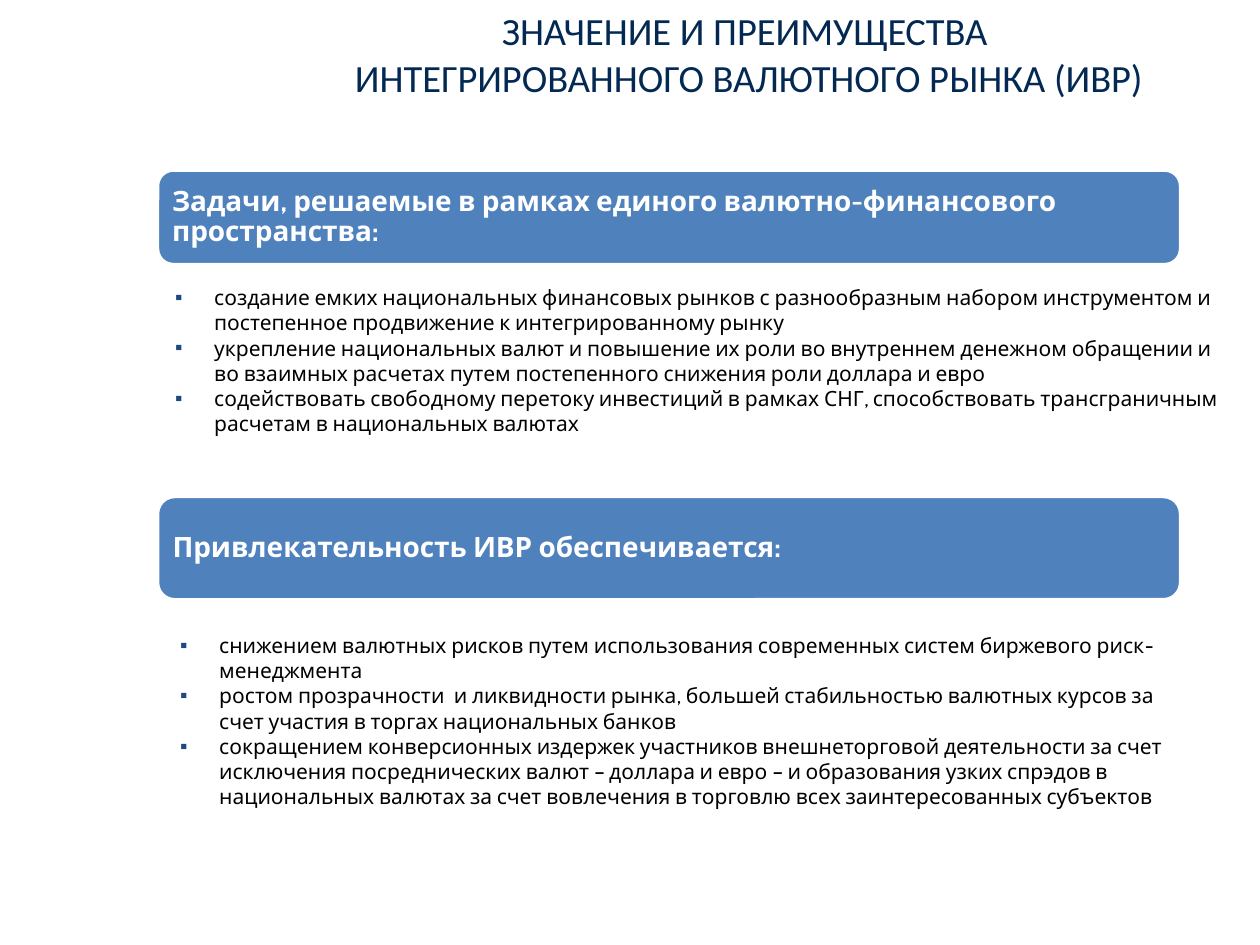
from lxml import etree
from pptx import Presentation
from pptx import util as u
from pptx.dml.color import RGBColor
from pptx.enum import shapes, text
from pptx.oxml import ns

NAVY = RGBColor(0x03, 0x29, 0x53)
BLUE = RGBColor(0x4F, 0x81, 0xBD)
BULLET = RGBColor(0x1F, 0x49, 0x7D)
WHITE = RGBColor(0xFF, 0xFF, 0xFF)
BLACK = RGBColor(0, 0, 0)

COLUMNS, ROWS = 100, 75
BANNER_LEFT, BANNER_WIDTH = 12.5, 81.2

TITLE = "ЗНАЧЕНИЕ И ПРЕИМУЩЕСТВА \vИНТЕГРИРОВАННОГО ВАЛЮТНОГО РЫНКА (ИВР)"
# Each section: heading, banner (row, height), list (column, row, width, height), items
SECTIONS = [
    ("Задачи, решаемые в рамках единого валютно-финансового пространства:",
     (13.5, 7.5), (12.9, 22.1, 85.4, 13.1),
     ["создание емких национальных финансовых рынков с разнообразным набором "
      "инструментом и постепенное продвижение к интегрированному рынку",
      "укрепление национальных валют и повышение их роли во внутреннем денежном "
      "обращении и во взаимных расчетах путем постепенного снижения роли доллара и евро",
      "содействовать свободному перетоку инвестиций в рамках СНГ, способствовать "
      "трансграничным расчетам в национальных валютах"]),
    ("Привлекательность ИВР обеспечивается:",
     (39.4, 8.2), (13.3, 49.7, 81.1, 15.1),
     ["снижением валютных рисков путем использования современных систем биржевого "
      "риск-менеджмента",
      "ростом прозрачности  и ликвидности рынка, большей стабильностью валютных "
      "курсов за счет участия в торгах национальных банков",
      "сокращением конверсионных издержек участников внешнеторговой деятельности за "
      "счет исключения посреднических валют – доллара и евро – и образования узких "
      "спрэдов в национальных валютах за счет вовлечения в торговлю всех "
      "заинтересованных субъектов"]),
]


class SlideBuilder:
    def __init__(self, deck, layout):
        self.page = deck.slides.add_slide(layout)
        self.column = deck.slide_width / COLUMNS
        self.row = deck.slide_height / ROWS

    def place(self, box, left, top, width, height):
        box.left, box.width = round(left * self.column), round(width * self.column)
        box.top, box.height = round(top * self.row), round(height * self.row)

    def style(self, para, font, size, color, bold=False):
        for span in para.runs:
            span.font.name, span.font.size = font, u.Pt(size)
            span.font.color.rgb, span.font.bold = color, bold

    def title(self, wording, *area):
        box = self.page.shapes.title
        self.place(box, *area)
        frame = box.text_frame
        frame.text = wording
        frame.auto_size = text.MSO_AUTO_SIZE.NONE
        frame.vertical_anchor = text.MSO_ANCHOR.MIDDLE
        para = frame.paragraphs[0]
        para.alignment = text.PP_ALIGN.CENTER
        self.style(para, "Calibri", 22, NAVY)

    def banner(self, wording, *area):
        box = self.page.shapes.add_shape(shapes.MSO_SHAPE.ROUNDED_RECTANGLE, 0, 0, 0, 0)
        self.place(box, *area)
        box.shadow.inherit = False
        box.fill.solid()
        box.fill.fore_color.rgb = BLUE
        box.line.color.rgb = WHITE
        box.line.width = u.Pt(2)
        frame = box.text_frame
        frame.text = wording
        frame.word_wrap = True
        frame.vertical_anchor = text.MSO_ANCHOR.MIDDLE
        frame.margin_left = frame.margin_right = u.Inches(0.08)
        para = frame.paragraphs[0]
        para.alignment = text.PP_ALIGN.LEFT
        para.line_spacing = 0.9
        self.style(para, "Cabin", 16, WHITE, bold=True)

    def bullets(self, box, items, *area):
        self.place(box, *area)
        frame = box.text_frame
        frame.text = "\n".join(items)
        frame.auto_size = text.MSO_AUTO_SIZE.NONE
        for para in frame.paragraphs:
            self.add_bullet(para)
            para.space_before = u.Pt(0)
            self.style(para, "Cabin", 12, BLACK)

    def add_bullet(self, para):
        props = para._p.get_or_add_pPr()
        indent = u.Inches(0.31)
        props.set("marL", str(indent))
        props.set("indent", str(-indent))
        color = etree.SubElement(props, ns.qn("a:buClr"))
        etree.SubElement(color, ns.qn("a:srgbClr"), val=str(BULLET))
        etree.SubElement(props, ns.qn("a:buChar"), char="▪")


def main():
    deck = Presentation()
    deck.slide_width, deck.slide_height = u.Inches(10), u.Inches(7.5)
    two_lists = deck.slide_layouts[3]
    builder = SlideBuilder(deck, two_lists)
    builder.title(TITLE, 18.9, -1.9, 81.1, 12.3)
    bodies = list(builder.page.placeholders)[1:3]
    for body, (heading, (top, height), list_area, items) in zip(bodies, SECTIONS):
        builder.banner(heading, BANNER_LEFT, top, BANNER_WIDTH, height)
        builder.bullets(body, items, *list_area)
    deck.save("out.pptx")


if __name__ == "__main__":
    main()
